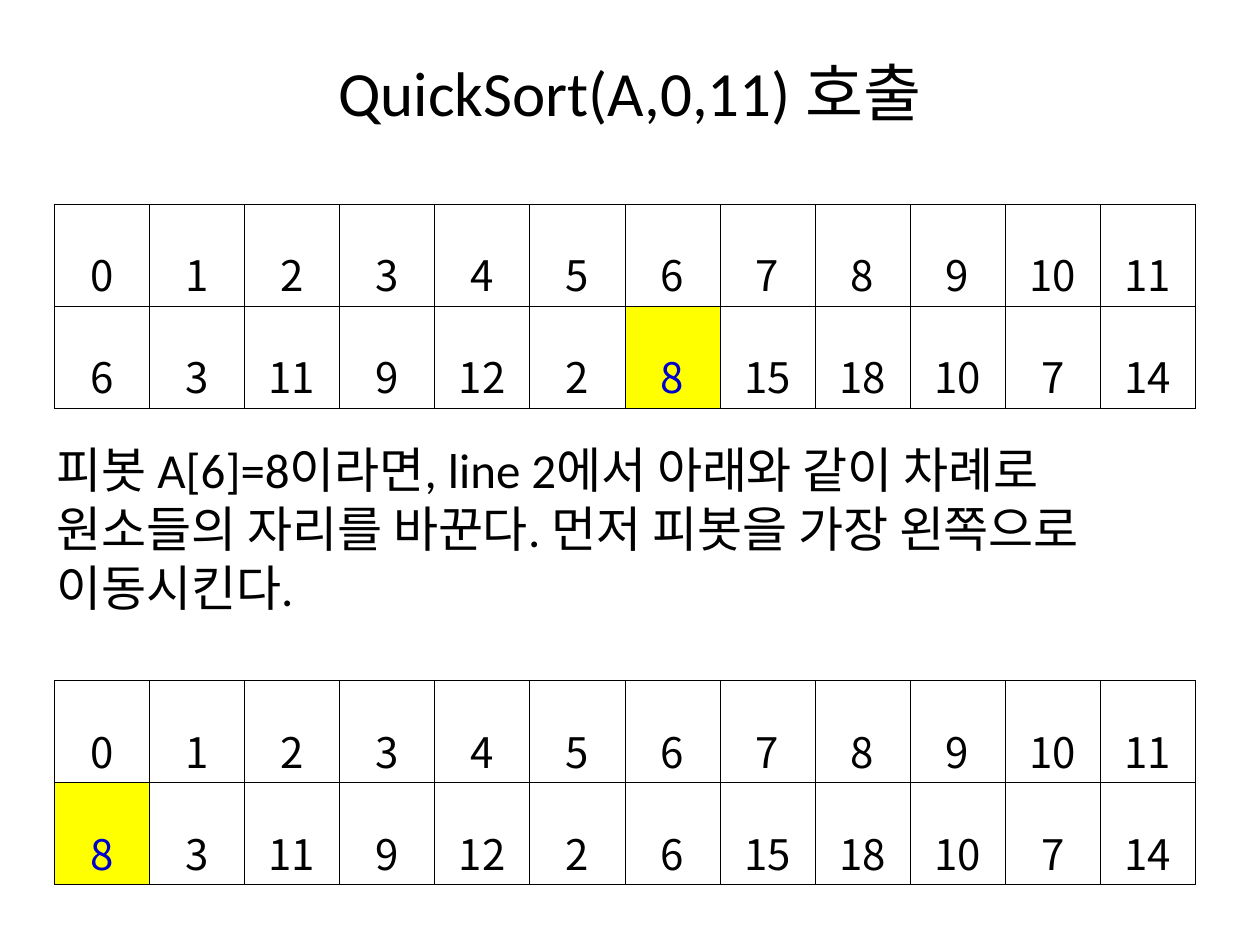
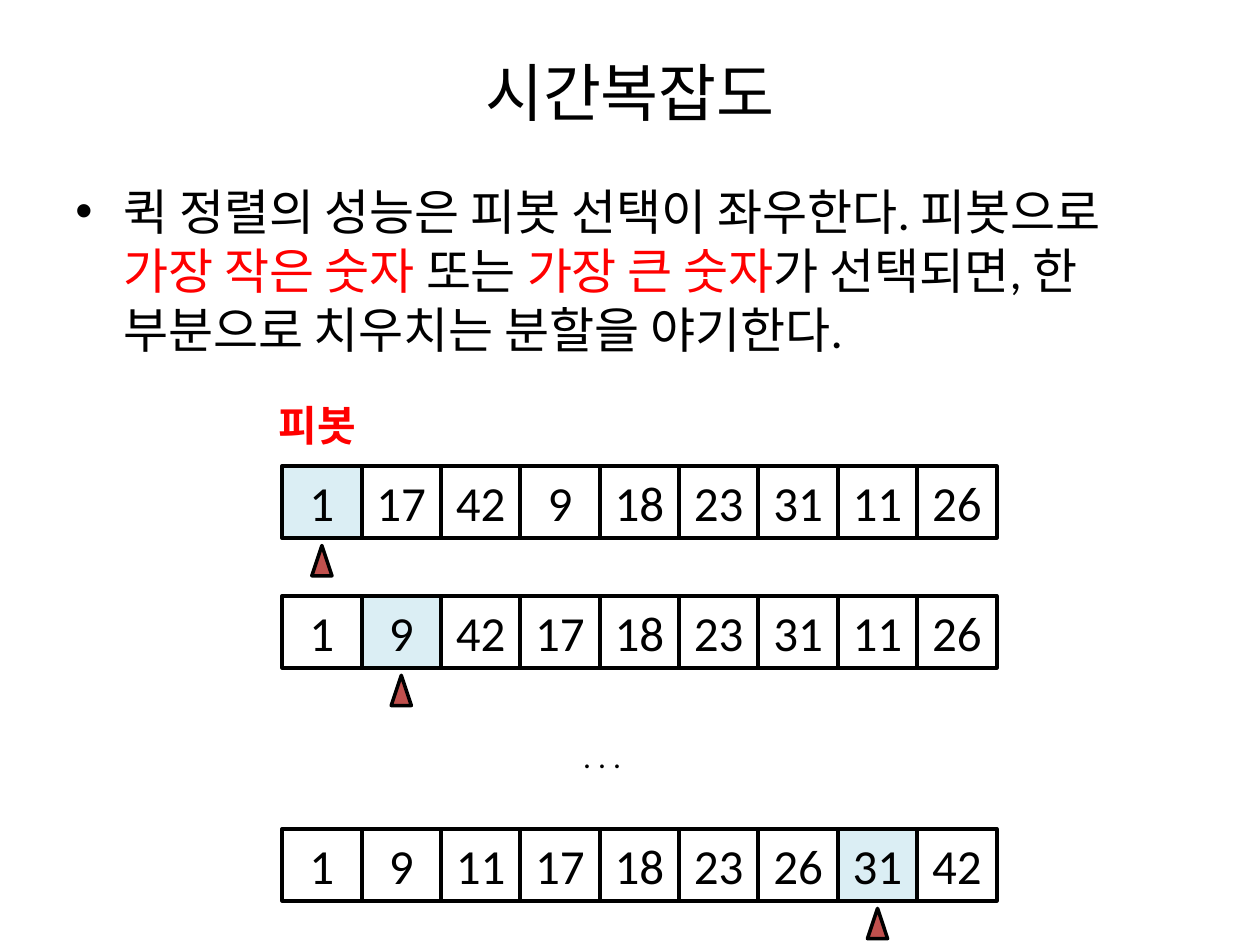
"""Build two slides on quicksort: moving the pivot, and time complexity."""
from dataclasses import dataclass

from lxml.etree import SubElement
from pptx import Presentation
from pptx.dml.color import RGBColor as RGB
from pptx.enum.lang import MSO_LANGUAGE_ID as LANG
from pptx.enum.shapes import MSO_SHAPE as SHAPE
from pptx.enum.text import MSO_ANCHOR as ANCHOR, PP_ALIGN as ALIGN
from pptx.oxml.ns import qn
from pptx.util import Inches, Pt


@dataclass(frozen=True)
class Theme:
    black: RGB = RGB(0x00, 0x00, 0x00)
    red: RGB = RGB(0xFF, 0x00, 0x00)
    blue: RGB = RGB(0x00, 0x00, 0xCC)
    yellow: RGB = RGB(0xFF, 0xFF, 0x00)
    pale: RGB = RGB(0xDB, 0xEE, 0xF4)
    brick: RGB = RGB(0xC0, 0x50, 0x4D)
    font: str = "Calibri"
    grid_font: str = "Noto Sans CJK KR"
    title: int = 36
    body: int = 28
    grid: int = 24
    small: int = 18


T = Theme()


def add_run(p, text, size=T.body, color=T.black, font=T.font, bold=False):
    r = p.add_run()
    r.text = text
    r.font.size = Pt(size)
    r.font.bold = bold
    r.font.name = font
    r.font.color.rgb = color
    r.font.language_id = LANG.KOREAN
    SubElement(r._r.get_or_add_rPr(), qn("a:ea"), typeface=font)


def add_box(s, x, y, w, h, align=ALIGN.LEFT, anchor=ANCHOR.TOP):
    sp = s.shapes.add_textbox(Inches(x), Inches(y), Inches(w), Inches(h))
    tf = sp.text_frame
    tf.word_wrap = True
    tf.vertical_anchor = anchor
    p = tf.paragraphs[0]
    p.alignment = align
    return p


prs = Presentation()
prs.slide_width, prs.slide_height = Inches(10), Inches(7.5)

slides = []
for title in ("QuickSort(A,0,11) 호출", "시간복잡도"):
    s = prs.slides.add_slide(prs.slide_layouts[6])
    add_run(add_box(s, 0.5, 0.3, 9, 0.85, ALIGN.CENTER, ANCHOR.MIDDLE), title, T.title)
    slides.append(s)
call_slide, cost_slide = slides

before = [6, 3, 11, 9, 12, 2, 8, 15, 18, 10, 7, 14]
after = [8, 3, 11, 9, 12, 2, 6, 15, 18, 10, 7, 14]
for y, values, pivot in ((1.62, before, 6), (5.4, after, 0)):
    frame = call_slide.shapes.add_table(2, len(values), Inches(0.43), Inches(y),
                                        Inches(9.06), Inches(1.62))
    table = frame.table
    table.first_row = table.horz_banding = False
    for row, numbers in enumerate((range(len(values)), values)):
        for col, number in enumerate(numbers):
            cell = table.cell(row, col)
            cell.margin_left = cell.margin_right = Inches(0.07)
            cell.margin_top = cell.margin_bottom = Inches(0.02)
            cell.vertical_anchor = ANCHOR.MIDDLE
            for side in ("a:lnL", "a:lnR", "a:lnT", "a:lnB"):
                ln = SubElement(cell._tc.get_or_add_tcPr(), qn(side), w=str(Pt(0.28)))
                SubElement(SubElement(ln, qn("a:solidFill")), qn("a:srgbClr"), val=str(T.black))
            is_pivot = row == 1 and col == pivot
            if is_pivot:
                cell.fill.solid()
                cell.fill.fore_color.rgb = T.yellow
            else:
                cell.fill.background()
            p = cell.text_frame.paragraphs[0]
            p.alignment = ALIGN.CENTER
            p.line_spacing = 1.6
            add_run(p, str(number), T.grid, T.blue if is_pivot else T.black, T.grid_font)

add_run(add_box(call_slide, 0.35, 3.44, 9.45, 1.51),
        "피봇 A[6]=8이라면, line 2에서 아래와 같이 차례로 원소들의 자리를 바꾼다. "
        "먼저 피봇을 가장 왼쪽으로 이동시킨다.")

p = add_box(cost_slide, 0.5, 1.39, 9, 1.65)
pPr = p._p.get_or_add_pPr()
pPr.set("marL", str(Inches(0.38)))
pPr.set("indent", str(-Inches(0.38)))
p.space_before = Pt(5.6)
SubElement(pPr, qn("a:buFont"), typeface="Arial")
SubElement(pPr, qn("a:buChar"), char="•")
for text, color in (("퀵 정렬의 성능은 피봇 선택이 좌우한다. 피봇으로 ", T.black),
                    ("가장 작은 숫자 ", T.red),
                    ("또는 ", T.black),
                    ("가장 큰 숫자", T.red),
                    ("가 선택되면, 한 부분으로 치우치는 분할을 야기한다.", T.black)):
    add_run(p, text, color=color)

add_run(add_box(cost_slide, 1.93, 3.12, 1.18, 0.5, ALIGN.CENTER), "피봇",
        T.grid, T.red, T.grid_font, True)

left, cell_w, cell_h = 2.24, 0.63, 0.57
mark_w, mark_h, mark_drop = 0.16, 0.24, 0.63
for y, values, pivot in ((3.7, [1, 17, 42, 9, 18, 23, 31, 11, 26], 0),
                         (4.73, [1, 9, 42, 17, 18, 23, 31, 11, 26], 1),
                         (6.58, [1, 9, 11, 17, 18, 23, 26, 31, 42], 7)):
    for i, number in enumerate(values):
        sp = cost_slide.shapes.add_shape(SHAPE.RECTANGLE, Inches(left + i * cell_w), Inches(y),
                                         Inches(cell_w), Inches(cell_h))
        sp.shadow.inherit = False
        sp.line.color.rgb = T.black
        sp.line.width = Pt(2.25)
        if i == pivot:
            sp.fill.solid()
            sp.fill.fore_color.rgb = T.pale
        else:
            sp.fill.background()
        tf = sp.text_frame
        tf.word_wrap = True
        tf.vertical_anchor = ANCHOR.TOP
        p = tf.paragraphs[0]
        p.alignment = ALIGN.CENTER
        add_run(p, str(number))
    mark_x = left + (pivot + 0.5) * cell_w - mark_w / 2
    mark = cost_slide.shapes.add_shape(SHAPE.ISOSCELES_TRIANGLE, Inches(mark_x),
                                       Inches(y + mark_drop), Inches(mark_w), Inches(mark_h))
    mark.shadow.inherit = False
    mark.fill.solid()
    mark.fill.fore_color.rgb = T.brick
    mark.line.color.rgb = T.black
    mark.line.width = Pt(2)

add_run(add_box(cost_slide, 4.53, 5.8, 0.63, 0.4), ". . .", T.small)

prs.save("out.pptx")
